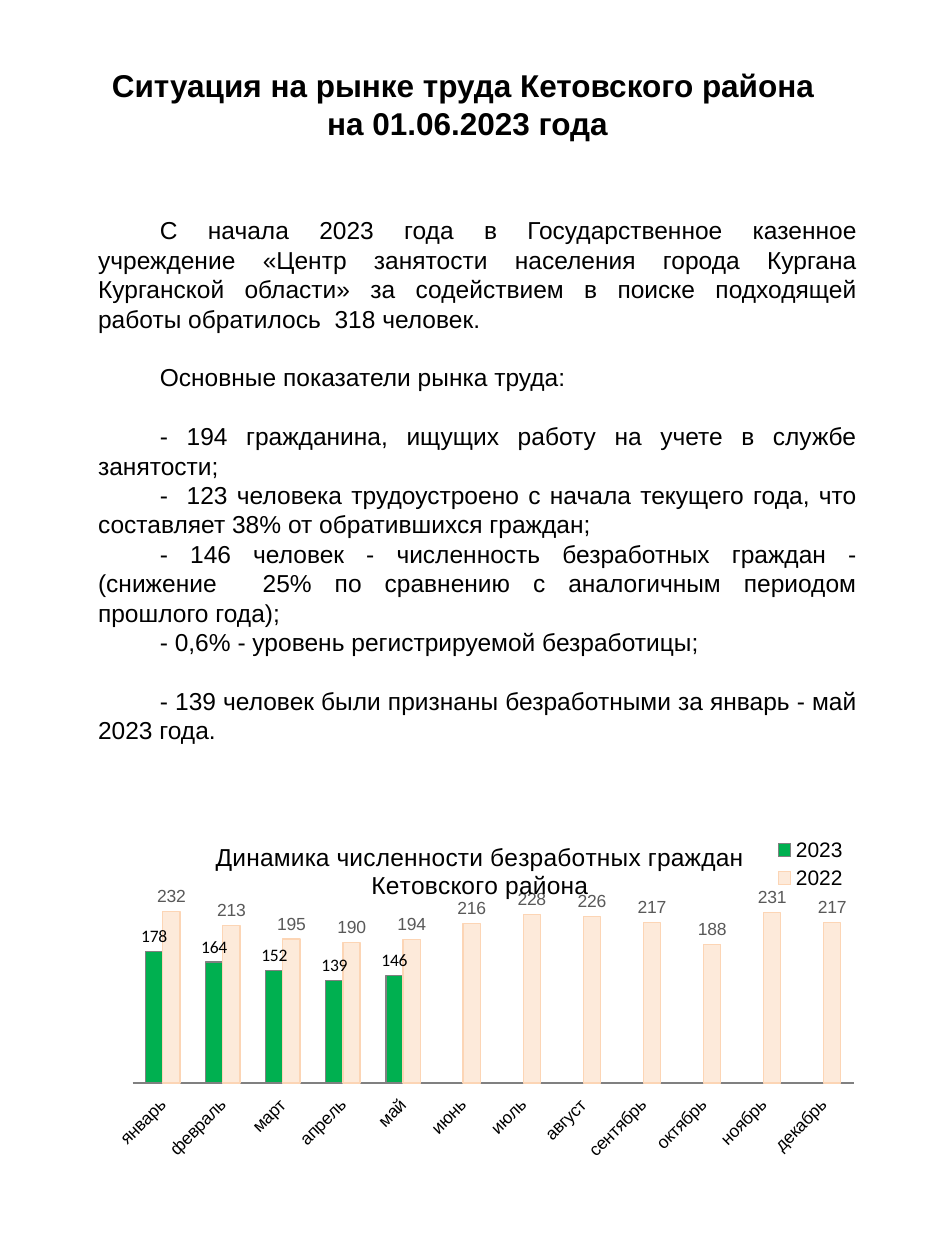
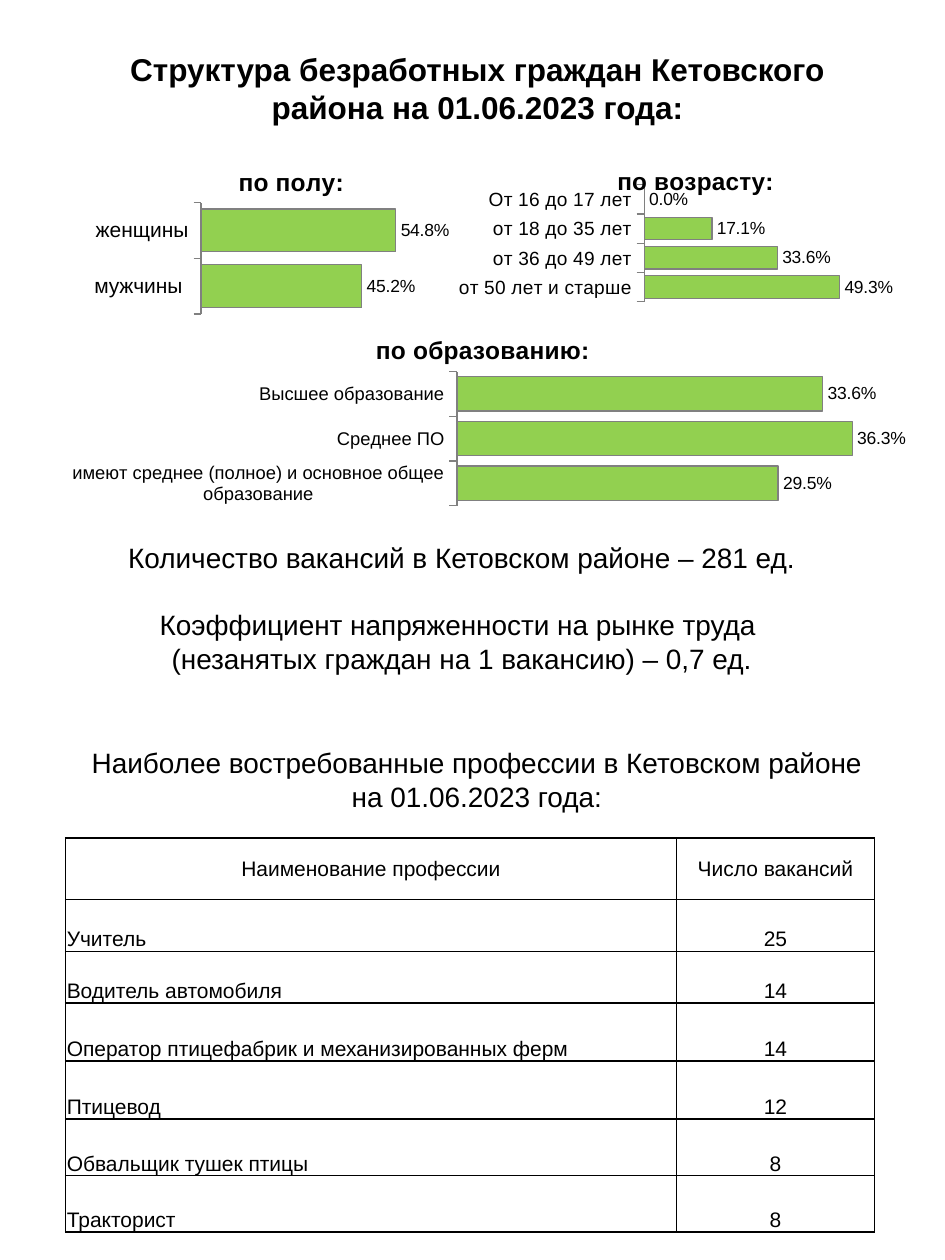
from lxml import etree
from pptx import Presentation
from pptx.chart.data import CategoryChartData
from pptx.dml.color import RGBColor
from pptx.enum.chart import XL_CHART_TYPE, XL_LABEL_POSITION, XL_LEGEND_POSITION, XL_TICK_LABEL_POSITION, XL_TICK_MARK
from pptx.enum.text import MSO_ANCHOR, MSO_AUTO_SIZE, PP_ALIGN
from pptx.oxml.ns import qn
from pptx.util import Inches, Pt

COLUMNS, BARS = XL_CHART_TYPE.COLUMN_CLUSTERED, XL_CHART_TYPE.BAR_CLUSTERED
OUTSIDE_END = XL_LABEL_POSITION.OUTSIDE_END
LEGEND_RIGHT = XL_LEGEND_POSITION.RIGHT
LABELS_LOW = XL_TICK_LABEL_POSITION.LOW
TICK_NONE, TICK_OUT = XL_TICK_MARK.NONE, XL_TICK_MARK.OUTSIDE
TOP, MIDDLE, BOTTOM = MSO_ANCHOR.TOP, MSO_ANCHOR.MIDDLE, MSO_ANCHOR.BOTTOM
GROW = MSO_AUTO_SIZE.SHAPE_TO_FIT_TEXT
LEFT, CENTER, JUSTIFY = PP_ALIGN.LEFT, PP_ALIGN.CENTER, PP_ALIGN.JUSTIFY

FONT, LABEL_FONT = "Arial", "Calibri"
BLACK, GRAY, DARK_GRAY = "000000", "808080", "595959"
GREEN, LIME, PEACH, PEACH_EDGE = "00B050", "92D050", "FDEADA", "FCD5B5"
TITLE_SIZE, NOTE_SIZE, BODY_SIZE, TABLE_SIZE = 18, 16, 14, 12

MARKET_TITLE = "Ситуация на рынке труда Кетовского района \vна 01.06.2023 года"
MARKET_TEXT = [
    ("С начала 2023 года в Государственное казенное учреждение «Центр занятости населения "
     "города Кургана Курганской области» за содействием в поиске подходящей работы "
     "обратилось  318 человек.", 0),
    ("Основные показатели рынка труда:", 1),
    ("- 194 гражданина, ищущих работу на учете в службе занятости;", 1),
    ("-  123 человека трудоустроено с начала текущего года, что составляет 38% от "
     "обратившихся граждан;", 0),
    ("- 146 человек - численность безработных граждан - (снижение  25% по сравнению с "
     "аналогичным периодом прошлого года);", 0),
    ("- 0,6% - уровень регистрируемой безработицы;", 0),
    ("- 139 человек были признаны безработными за январь - май 2023 года.", 1),
]
MONTHS = ["январь", "февраль", "март", "апрель", "май", "июнь", "июль", "август",
          "сентябрь", "октябрь", "ноябрь", "декабрь"]
UNEMPLOYED = [
    ("2023", [178, 164, 152, 139, 146] + [None] * 7, GREEN, GRAY, BLACK, LABEL_FONT),
    ("2022", [232, 213, 195, 190, 194, 216, 228, 226, 217, 188, 231, 217],
     PEACH, PEACH_EDGE, DARK_GRAY, FONT),
]

STRUCTURE_TITLE = "Структура безработных граждан Кетовского района на 01.06.2023 года:"
STRUCTURE_CHARTS = [
    dict(title="по полу:", at=(0.69, 1.22, 2.92, 1.34), plot=(0.31, 0.29, 0.58, 0.66),
         title_at=(0.4, 0.05), top=0.6, size=12, reverse=False,
         shares=[("мужчины ", 0.452), ("женщины", 0.548)]),
    dict(title="по возрасту:", at=(3.51, 1.22, 3.58, 1.18), plot=(0.45, 0.21, 0.53, 0.79),
         title_at=(0.38, 0.05), top=0.6, size=11, reverse=True,
         shares=[("От 16 до 17 лет", 0), ("от 18 до 35 лет", 0.171),
                 ("от 36 до 49 лет", 0.336), ("от 50 лет и старше", 0.493)]),
    dict(title="по образованию:", at=(0.44, 2.56, 6.78, 1.5), plot=(0.47, 0.26, 0.51, 0.71),
         title_at=(0.37, 0.04), top=0.4, size=10.5, reverse=True,
         shares=[("Высшее образование", 0.336), ("Среднее ПО", 0.363),
                 ("имеют среднее (полное) и основное общее образование", 0.295)]),
]
VACANCY_TEXT = [
    ("Количество вакансий в Кетовском районе – 281 ед.", 0),
    ("Коэффициент напряженности на рынке труда ", 1),
    ("(незанятых граждан на 1 вакансию) – 0,7 ед.", 0),
]
DEMAND_TITLE = "Наиболее востребованные профессии в Кетовском районе на 01.06.2023 года:"
PROFESSIONS = [
    ("Наименование профессии", "Число вакансий"),
    ("Учитель", "25"),
    ("Водитель автомобиля", "14"),
    ("Оператор птицефабрик и механизированных ферм", "14"),
    ("Птицевод", "12"),
    ("Обвальщик тушек птицы", "8"),
    ("Тракторист", "8"),
]
COLUMN_WIDTHS = [4.85, 1.57]
ROW_HEIGHTS = [0.49, 0.41, 0.41, 0.46, 0.46, 0.45, 0.45]


def color(value):
    return RGBColor.from_string(value)


def inches(lengths):
    return [Inches(length) for length in lengths]


def style_font(font, size, tint=BLACK, name=FONT, bold=False):
    font.size, font.name, font.bold = Pt(size), name, bold
    font.color.rgb = color(tint)


def style_line(line, tint):
    line.color.rgb = color(tint)
    line.width = Pt(0.75)


def add_text(page, at, paragraphs, size, align=CENTER, anchor=TOP, bold=False, indent=0):
    frame = page.shapes.add_textbox(*inches(at)).text_frame
    frame.word_wrap = True
    frame.auto_size = GROW
    frame.vertical_anchor = anchor
    frame.text = "\n".join(text for text, _ in paragraphs)
    for para, (_, blank_lines) in zip(frame.paragraphs, paragraphs):
        para.alignment = align
        para.space_before = Pt(size * 1.2 * blank_lines)
        if indent:
            para._p.get_or_add_pPr().set("indent", str(Inches(indent)))
        for span in para.runs:
            style_font(span.font, size, bold=bold)


def set_layout(parent, index, values, inner=False):
    for old in parent.findall(qn("c:layout")):
        parent.remove(old)
    layout = etree.Element(qn("c:layout"))
    manual = etree.SubElement(layout, qn("c:manualLayout"))
    settings = [("layoutTarget", "inner")] if inner else []
    settings += [("xMode", "edge"), ("yMode", "edge")] + list(zip("xywh", values))
    for tag, value in settings:
        etree.SubElement(manual, qn("c:" + tag)).set("val", str(value))
    parent.insert(index, layout)


def add_bars(page, kind, at, title, title_at, plot_at, categories, series, top,
             gap, number_format, axis_size, tick, bold_title):
    data = CategoryChartData()
    data.categories = categories
    for name, values, *_ in series:
        data.add_series(name, values)
    chart = page.shapes.add_chart(kind, *inches(at), data).chart
    style_font(chart.font, TABLE_SIZE, name=LABEL_FONT)
    chart.has_legend = False
    chart.has_title = True
    chart.chart_title.text_frame.text = title
    style_font(chart.chart_title.text_frame.paragraphs[0].runs[0].font, BODY_SIZE, bold=bold_title)
    chart.chart_title.include_in_layout = False
    set_layout(chart.element.xpath("c:chart/c:title")[0], 1, title_at)
    set_layout(chart.element.xpath("c:chart/c:plotArea")[0], 0, plot_at, inner=True)

    axis = chart.category_axis
    axis.major_tick_mark, axis.minor_tick_mark = tick, TICK_NONE
    axis.tick_label_position = LABELS_LOW
    axis.has_major_gridlines = False
    style_line(axis.format.line, GRAY)
    style_font(axis.tick_labels.font, axis_size)
    scale = chart.value_axis
    scale.visible = scale.has_major_gridlines = False
    scale.minimum_scale, scale.maximum_scale = 0, top

    plot = chart.plots[0]
    plot.gap_width, plot.overlap = gap, 0
    plot.vary_by_categories = False
    for bars, (_, _, fill, edge, label_tint, label_font) in zip(plot.series, series):
        bars.invert_if_negative = False
        bars.format.fill.solid()
        bars.format.fill.fore_color.rgb = color(fill)
        style_line(bars.format.line, edge)
        labels = bars.data_labels
        labels.show_value = True
        labels.position = OUTSIDE_END
        labels.number_format, labels.number_format_is_linked = number_format, False
        style_font(labels.font, 10, label_tint, label_font)
    return chart


def add_dynamics_chart(page):
    chart = add_bars(page, COLUMNS, (0.68, 6.5, 6.22, 2.87),
                     "Динамика численности безработных граждан Кетовского района", (0.16, 0.05),
                     (0.06, 0.22, 0.92, 0.51), MONTHS, UNEMPLOYED, 250, 150, "#,##0",
                     10, TICK_NONE, False)
    chart.element.xpath(".//c:catAx/c:txPr/a:bodyPr")[0].set("rot", "-2700000")
    chart.has_legend = True
    chart.legend.position = LEGEND_RIGHT
    chart.legend.include_in_layout = False
    style_font(chart.legend.font, TABLE_SIZE)
    set_layout(chart.element.xpath("c:chart/c:legend")[0], 1, (0.87, 0.04, 0.11, 0.17))


def add_structure_chart(page, part):
    names, values = zip(*part["shares"])
    series = [(part["title"], values, LIME, GRAY, BLACK, FONT)]
    chart = add_bars(page, BARS, part["at"], part["title"], part["title_at"], part["plot"],
                     names, series, part["top"], 30, "0.0%", part["size"], TICK_OUT, True)
    chart.category_axis.reverse_order = part["reverse"]


def outline_cell(cell):
    properties = cell._tc.get_or_add_tcPr()
    for index, side in enumerate(("lnL", "lnR", "lnT", "lnB")):
        line = etree.Element(qn("a:" + side), w=str(Pt(1)))
        fill = etree.SubElement(line, qn("a:solidFill"))
        etree.SubElement(fill, qn("a:srgbClr")).set("val", BLACK)
        properties.insert(index, line)


def add_professions(page):
    size = sum(COLUMN_WIDTHS), sum(ROW_HEIGHTS)
    table = page.shapes.add_table(len(PROFESSIONS), len(COLUMN_WIDTHS),
                                  *inches((0.52, 6.65) + size)).table
    table.first_row = table.horz_banding = False
    for column, width in zip(table.columns, COLUMN_WIDTHS):
        column.width = Inches(width)
    for r, (row, height) in enumerate(zip(table.rows, ROW_HEIGHTS)):
        row.height = Inches(height)
        for c, cell in enumerate(row.cells):
            cell.margin_left = cell.margin_right = cell.margin_top = Inches(0.01)
            cell.margin_bottom = 0
            cell.vertical_anchor = BOTTOM if r else MIDDLE
            cell.text = PROFESSIONS[r][c]
            para = cell.text_frame.paragraphs[0]
            para.alignment = LEFT if r and not c else CENTER
            style_font(para.runs[0].font, TABLE_SIZE)
            cell.fill.background()
            outline_cell(cell)


def main():
    deck = Presentation()
    deck.slide_width, deck.slide_height = Inches(7.5), Inches(10)
    blank = deck.slide_layouts[6]

    market = deck.slides.add_slide(blank)
    add_text(market, (0.52, 0.47, 6.38, 0.71), [(MARKET_TITLE, 0)], TITLE_SIZE,
             anchor=MIDDLE, bold=True)
    add_text(market, (0.68, 1.64, 6.22, 4.34), MARKET_TEXT, BODY_SIZE, JUSTIFY, MIDDLE, indent=0.49)
    add_dynamics_chart(market)

    structure = deck.slides.add_slide(blank)
    add_text(structure, (0.68, 0.35, 6.22, 0.71), [(STRUCTURE_TITLE, 0)], TITLE_SIZE, bold=True)
    for part in STRUCTURE_CHARTS:
        add_structure_chart(structure, part)
    add_text(structure, (0.41, 4.24, 6.51, 1.18), VACANCY_TEXT, NOTE_SIZE)
    add_text(structure, (0.48, 5.87, 6.61, 0.64), [(DEMAND_TITLE, 0)], NOTE_SIZE)
    add_professions(structure)

    deck.save("out.pptx")


if __name__ == "__main__":
    main()
